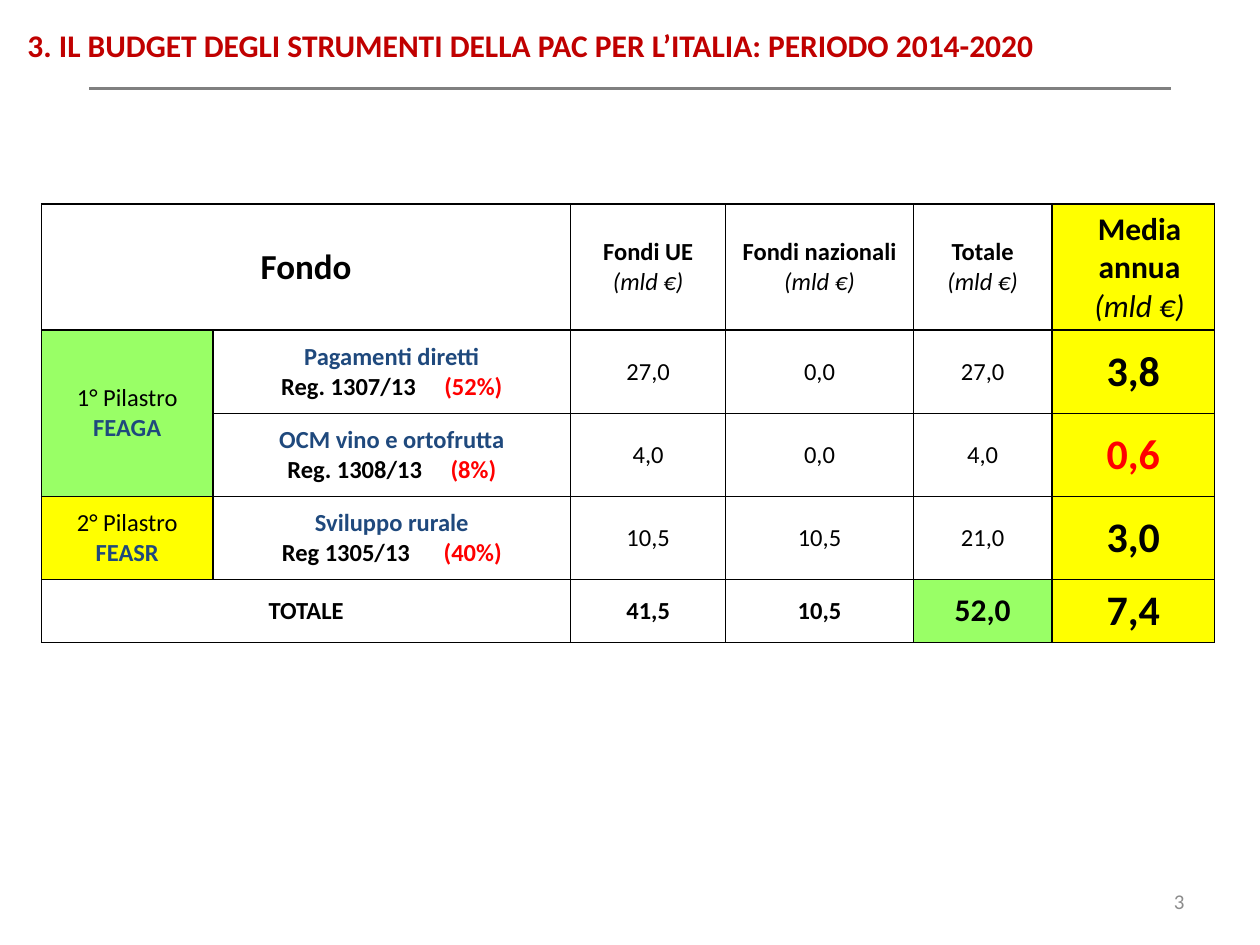
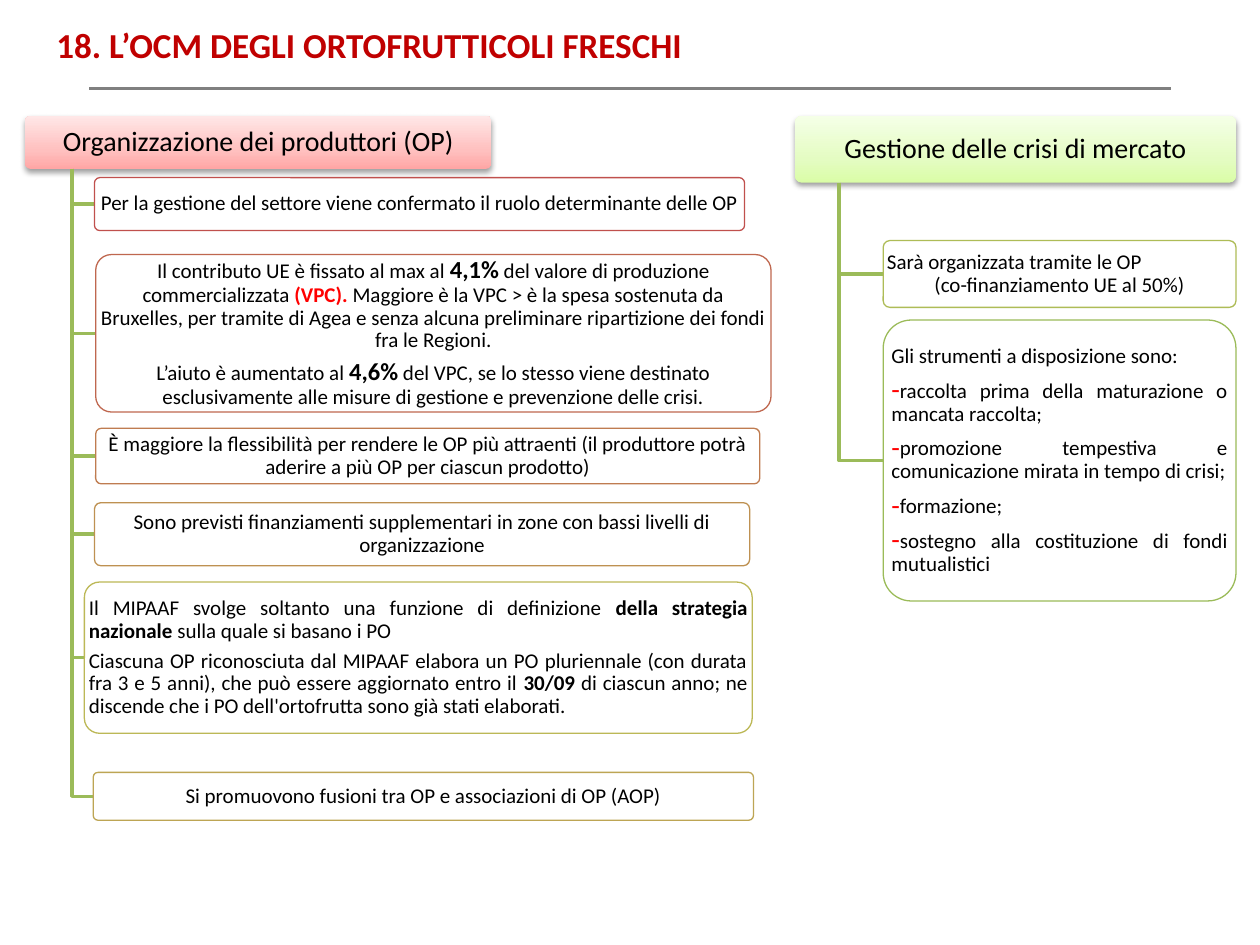
from itertools import cycle

from lxml.etree import SubElement
from pptx import Presentation
from pptx.dml.color import RGBColor
from pptx.enum.shapes import MSO_CONNECTOR, MSO_SHAPE
from pptx.enum.text import MSO_ANCHOR, PP_ALIGN
from pptx.oxml import parse_xml
from pptx.oxml.ns import nsdecls, qn
from pptx.util import Inches, Pt

FONT = "Calibri"
BLACK, WHITE, RED, NAVY = "000000", "FFFFFF", "FF0000", "1F497D"
TITLE_RED, RULE_GREY, NUMBER_GREY = "C00000", "808080", "8C8C8C"
YELLOW, LIME, RAIL_GREEN = "FFFF00", "99FF66", "9BBB59"
CENTER, LEFT, RIGHT, JUSTIFY = PP_ALIGN.CENTER, PP_ALIGN.LEFT, PP_ALIGN.RIGHT, PP_ALIGN.JUSTIFY
CORNER = 0.1


def rgb(value):
    """Turn a hex string into a colour."""
    return RGBColor.from_string(value)


def add_span(para, text, size=12, color=BLACK, bold=False, italic=False, tracking=0):
    """Add formatted text to a paragraph."""
    span = para.add_run()
    span.text = text
    font = span.font
    font.name, font.size, font.bold, font.italic = FONT, Pt(size), bold, italic
    font.color.rgb = rgb(color)
    if tracking:
        span._r.get_or_add_rPr().set("spc", str(tracking * 100))


def add_bullet(para):
    """Give a paragraph a larger red dash as its bullet."""
    properties = para._p.get_or_add_pPr()
    properties.set("marL", "0")
    properties.set("indent", "0")
    SubElement(SubElement(properties, qn("a:buClr")), qn("a:srgbClr"), val=RED)
    SubElement(properties, qn("a:buSzPct"), val="133000")
    SubElement(properties, qn("a:buFont"), typeface=FONT)
    SubElement(properties, qn("a:buChar"), char="-")


def write(frame, paragraphs, aligns=(LEFT,), gap=0, leading=1, bullets_from=None, **style):
    """Fill a text frame; a paragraph is a string or a list of (text, format) spans."""
    for index, (spans, align) in enumerate(zip(paragraphs, cycle(aligns))):
        para = frame.add_paragraph() if index else frame.paragraphs[0]
        para.alignment, para.line_spacing = align, leading
        if index:
            para.space_before = Pt(gap)
        if bullets_from is not None and index >= bullets_from:
            add_bullet(para)
        for text, changes in [(spans, {})] if isinstance(spans, str) else spans:
            add_span(para, text, **{**style, **changes})


def set_margins(target, across, down):
    """Set the inner margins of a text frame or cell."""
    target.margin_left = target.margin_right = Inches(across)
    target.margin_top = target.margin_bottom = Inches(down)


class Slides:
    """Holds the deck, its style and the current page."""

    def __init__(self):
        """Start an empty 4:3 deck."""
        self.deck = Presentation()
        self.deck.slide_width, self.deck.slide_height = Inches(10), Inches(7.5)

    def add_page(self, title, left, top, size):
        """Start a page with its title and the grey rule."""
        self.page = self.deck.slides.add_slide(self.deck.slide_layouts[6])
        rule = self.page.shapes.add_connector(
            MSO_CONNECTOR.STRAIGHT, Inches(0.71), Inches(0.7), Inches(9.29), Inches(0.7))
        rule.line.color.rgb, rule.line.width = rgb(RULE_GREY), Pt(1.75)
        SubElement(rule._element.spPr, qn("a:effectLst"))
        self.add_text(title, left, top, 9.43, 0.42, size=size, color=TITLE_RED, bold=True)

    def add_text(self, text, left, top, width, height, anchor=MSO_ANCHOR.TOP, **style):
        """Add a text box."""
        box = self.page.shapes.add_textbox(*map(Inches, (left, top, width, height)))
        box.text_frame.word_wrap = True
        box.text_frame.vertical_anchor = anchor
        write(box.text_frame, [text], **style)

    def add_rounded(self, paragraphs, left, top, width, height, **style):
        """Add a rounded rectangle holding text."""
        box = self.page.shapes.add_shape(
            MSO_SHAPE.ROUNDED_RECTANGLE, *map(Inches, (left, top, width, height)))
        box.adjustments[0] = CORNER
        box.shadow.inherit = False
        frame = box.text_frame
        frame.word_wrap, frame.vertical_anchor = True, MSO_ANCHOR.MIDDLE
        corner_inset = 0.29 * CORNER * min(width, height)
        set_margins(frame, max(0, 0.03 - corner_inset), max(0, 0.02 - corner_inset))
        write(frame, paragraphs, **{"aligns": (CENTER,), "gap": 4.2, "leading": 0.9, **style})
        return box

    def add_header(self, text, left, top, width, height, colors):
        """Add a header with an upward gradient and a soft shadow."""
        box = self.add_rounded([text], left, top, width, height, size=16)
        box.line.fill.background()
        stops = "".join(f'<a:gs pos="{place}000"><a:srgbClr val="{color}"/></a:gs>'
                        for place, color in zip((0, 35, 100), colors))
        properties = box._element.spPr
        properties.find(qn("a:prstGeom")).addnext(parse_xml(
            f'<a:gradFill {nsdecls("a")} rotWithShape="1"><a:gsLst>{stops}</a:gsLst>'
            '<a:lin ang="16200000" scaled="0"/></a:gradFill>'))
        properties.find(qn("a:effectLst")).append(parse_xml(
            f'<a:outerShdw {nsdecls("a")} blurRad="40000" dist="20000" dir="5400000" '
            f'rotWithShape="0"><a:srgbClr val="{BLACK}"><a:alpha val="38000"/></a:srgbClr>'
            '</a:outerShdw>'))

    def add_rail(self, left, top, right, bottom):
        """Add an elbow line going down and then right."""
        builder = self.page.shapes.build_freeform(Inches(left), Inches(top))
        builder.add_line_segments(
            [(Inches(left), Inches(bottom)), (Inches(right), Inches(bottom))], close=False)
        rail = builder.convert_to_shape()
        rail.fill.background()
        rail.line.color.rgb, rail.line.width = rgb(RAIL_GREEN), Pt(2)
        rail.shadow.inherit = False

    def add_branch(self, header, items):
        """Add a header and the boxes that hang from it."""
        self.add_header(**header)
        rail_left = header["left"] + header["width"] / 10
        rail_top = header["top"] + header["height"]
        for paragraphs, (left, top, width, height), outline, style in items:
            self.add_rail(rail_left, rail_top, left, top + height / 2)
            box = self.add_rounded(paragraphs, left, top, width, height, **style)
            box.fill.solid()
            box.fill.fore_color.rgb = rgb(WHITE)
            box.line.color.rgb, box.line.width = rgb(outline), Pt(0.75)

    def add_table(self, left, top, widths, heights, rows, fills, merges):
        """Add a bordered table; rows hold (paragraphs, format) or None."""
        table = self.page.shapes.add_table(
            len(heights), len(widths), Inches(left), Inches(top),
            Inches(sum(widths)), Inches(sum(heights))).table
        for column, width in zip(table.columns, widths):
            column.width = Inches(width)
        for row, height in zip(table.rows, heights):
            row.height = Inches(height)
        for y, row in enumerate(rows):
            for x, content in enumerate(row):
                cell = table.cell(y, x)
                set_margins(cell, 0.1, 0.05)
                cell.vertical_anchor = MSO_ANCHOR.MIDDLE
                self.add_borders(cell)
                cell.fill.solid()
                cell.fill.fore_color.rgb = rgb(fills.get((y, x), WHITE))
                if content:
                    paragraphs, style = content
                    write(cell.text_frame, paragraphs, aligns=(CENTER,), **{"size": 14, **style})
        for first, last in merges:
            table.cell(*first).merge(table.cell(*last))
        return table

    def add_borders(self, cell):
        """Draw black lines on the four sides of a cell."""
        properties = cell._tc.get_or_add_tcPr()
        for side in ("lnL", "lnR", "lnT", "lnB"):
            line = SubElement(properties, qn(f"a:{side}"), w=str(Pt(1)))
            SubElement(SubElement(line, qn("a:solidFill")), qn("a:srgbClr"), val=BLACK)


def heading(text, size=14):
    """Describe a column heading with its unit."""
    return [[(text, {"bold": True})], [("(mld €)", {"italic": True})]], {"size": size}


def pillar(name, fund):
    """Describe a pillar cell."""
    return [name, [(fund, {"color": NAVY, "bold": True})]], {}


def measure(name, rule, share, tracking=13):
    """Describe a measure with its regulation and budget share."""
    details = [(rule, {}), (" ", {"tracking": tracking}), (share, {"color": RED})]
    return [[(name, {"color": NAVY})], details], {"bold": True}


def figures(*values, average, color=BLACK):
    """Describe the amounts of a row, ending in the yearly average."""
    amounts = [([value], {}) for value in values]
    return amounts + [([average], {"size": 24, "bold": True, "color": color})]


def build_budget(slides):
    """Build the budget page."""
    slides.add_page("3. IL BUDGET DEGLI STRUMENTI DELLA PAC PER L’ITALIA: PERIODO 2014-2020",
                    0.12, 0.16, 18)
    rows = [
        [(["Fondo"], {"size": 20, "bold": True}), None, heading("Fondi UE"),
         heading("Fondi nazionali"), heading("Totale"), heading("Media annua", 18)],
        [pillar("1° Pilastro", "FEAGA"), measure("Pagamenti diretti", "Reg. 1307/13", "(52%)"),
         *figures("27,0", "0,0", "27,0", average="3,8")],
        [None, measure("OCM vino e ortofrutta", "Reg. 1308/13", "(8%)"),
         *figures("4,0", "0,0", "4,0", average="0,6", color=RED)],
        [pillar("2° Pilastro", "FEASR"), measure("Sviluppo rurale", "Reg 1305/13", "(40%)", 16),
         *figures("10,5", "10,5", "21,0", average="3,0")],
        [(["TOTALE"], {"bold": True}), None, (["41,5"], {"bold": True}),
         (["10,5"], {"bold": True}), (["52,0"], {"bold": True, "size": 18}),
         (["7,4"], {"bold": True, "size": 24})],
    ]
    fills = {(row, 5): YELLOW for row in range(5)}
    fills.update({(1, 0): LIME, (2, 0): LIME, (3, 0): YELLOW, (4, 4): LIME})
    table = slides.add_table(
        0.33, 1.62, (1.36, 2.84, 1.23, 1.49, 1.1, 1.29), (0.99, 0.66, 0.66, 0.66, 0.5),
        rows, fills, [((0, 0), (0, 1)), ((1, 0), (2, 0)), ((4, 0), (4, 1))])
    table.cell(0, 5).margin_left = Inches(0.2)
    slides.add_text("3", 7.17, 6.95, 2.33, 0.4, anchor=MSO_ANCHOR.MIDDLE,
                    aligns=(RIGHT,), color=NUMBER_GREY)


def build_produce(slides):
    """Build the fresh produce page."""
    slides.add_page("18. L’OCM DEGLI ORTOFRUTTICOLI FRESCHI", 0.35, 0.14, 20)
    bold, rate = {"bold": True}, {"bold": True, "size": 14}
    slides.add_branch(
        {"text": "Organizzazione dei produttori (OP)", "left": 0.2, "top": 0.92, "width": 3.7,
         "height": 0.42, "colors": ("FFA6A5", "FFC0BF", "FFE7E7")},
        [(["Per la gestione del settore viene confermato il ruolo determinante delle OP"],
          (0.75, 1.41, 5.16, 0.42), "C0504D", {}),
         ([[("Il contributo UE è fissato al max al ", {}), ("4,1%", rate),
            (" del valore di produzione commercializzata ", {}),
            ("(VPC). ", {"bold": True, "color": RED}),
            ("Maggiore è la VPC > è la spesa sostenuta da Bruxelles, per tramite di Agea e senza "
             "alcuna preliminare ripartizione dei fondi fra le Regioni.", {})],
           [("L’aiuto è aumentato al ", {}), ("4,6%", rate),
            (" del VPC, se lo stesso viene destinato esclusivamente alle misure di gestione e "
             "prevenzione delle crisi.", {})]],
          (0.76, 2.02, 5.36, 1.25), "BF674F", {}),
         (["È maggiore la flessibilità per rendere le OP più attraenti (il produttore potrà "
           "aderire a più OP per ciascun prodotto)"],
          (0.76, 3.4, 5.27, 0.44), "BF7C50", {}),
         (["Sono previsti finanziamenti supplementari in zone con bassi livelli di "
           "organizzazione"],
          (0.75, 3.99, 5.2, 0.5), "BE9152", {}),
         (["Si promuovono fusioni tra OP e associazioni di OP (AOP)"],
          (0.74, 6.13, 5.24, 0.38), "BDA554", {}),
         ([[("Il MIPAAF svolge soltanto una funzione di definizione ", {}),
            ("della strategia nazionale ", bold), ("sulla quale si basano i PO", {})],
           [("Ciascuna OP riconosciuta dal MIPAAF elabora un PO pluriennale (con durata fra 3 e "
             "5 anni), che può essere aggiornato entro il ", {}), ("30/09 ", bold),
            ("di ciascun anno; ne discende che i PO dell'ortofrutta sono già stati elaborati.",
             {})]],
          (0.67, 4.62, 5.3, 1.2), "BCB856", {"aligns": (JUSTIFY,)})])
    slides.add_branch(
        {"text": "Gestione delle crisi di mercato", "left": 6.31, "top": 0.92, "width": 3.5,
         "height": 0.53, "colors": ("DAFDA7", "E4FCC2", "F5FFE7")},
        [(["Sarà organizzata tramite le OP", "(co-finanziamento UE al 50%)"],
          (7.01, 1.91, 2.8, 0.53), "AEBC57", {"aligns": (LEFT, CENTER), "gap": 0}),
         (["Gli strumenti a disposizione sono:",
           "raccolta prima della maturazione o mancata raccolta;",
           "promozione tempestiva e comunicazione mirata in tempo di crisi;",
           "formazione;", "sostegno alla costituzione di fondi mutualistici"],
          (7.01, 2.54, 2.8, 2.23), RAIL_GREEN,
          {"aligns": (JUSTIFY,), "bullets_from": 1, "gap": 7})])


def main():
    """Build and save the deck."""
    slides = Slides()
    build_budget(slides)
    build_produce(slides)
    slides.deck.save("out.pptx")


if __name__ == "__main__":
    main()
